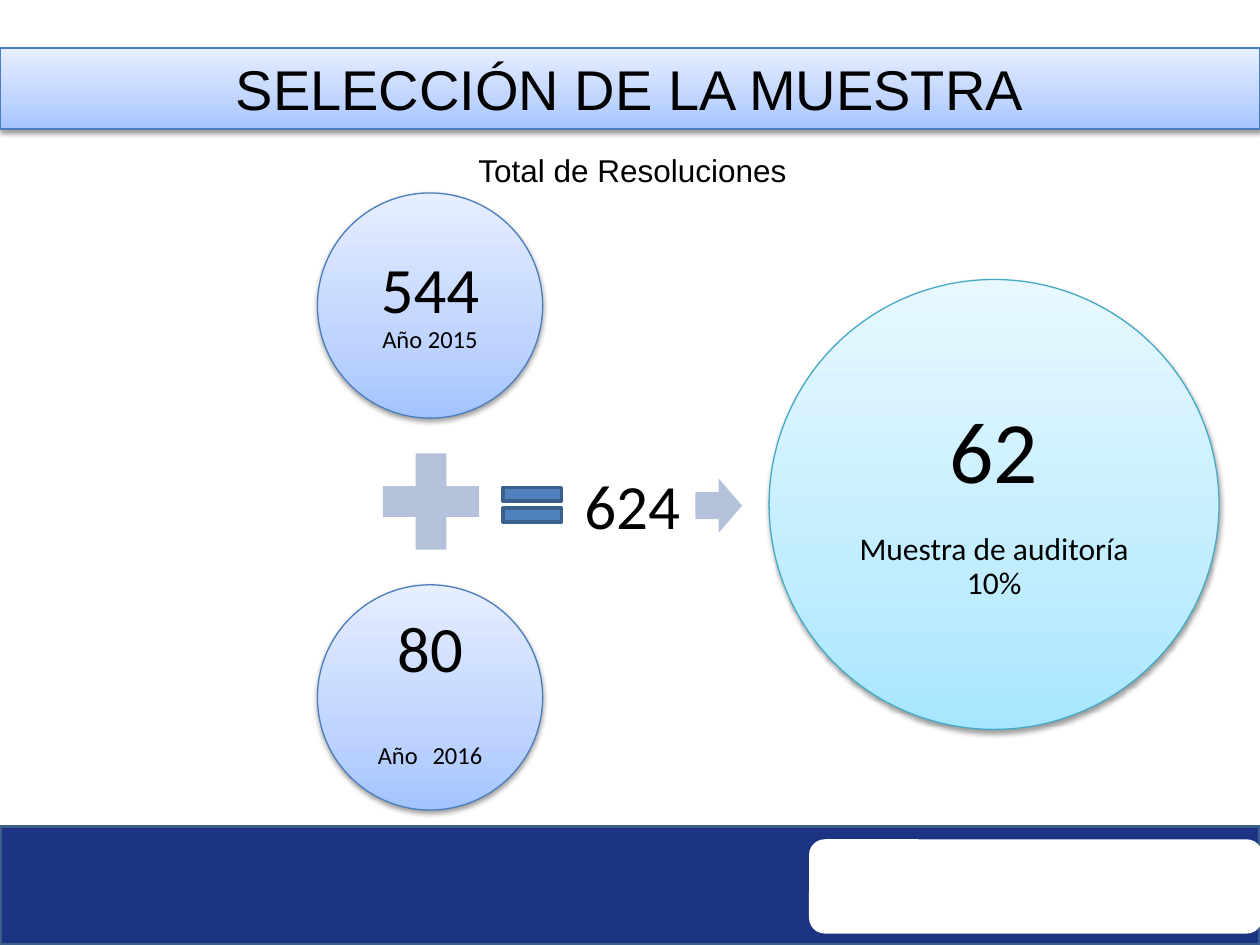
import copy
import math
import lxml.etree
import pptx
import pptx.util
import pptx.dml.color
import pptx.enum.shapes
import pptx.enum.text
import pptx.oxml.ns

Cm, Pt = pptx.util.Cm, pptx.util.Pt
KIND = pptx.enum.shapes.MSO_SHAPE
ALIGN = pptx.enum.text.PP_ALIGN
MID = pptx.enum.text.MSO_ANCHOR.MIDDLE
TOP = pptx.enum.text.MSO_ANCHOR.TOP
qn = pptx.oxml.ns.qn

HUE = {"navy": "1C3481", "edge": "3A5F8C", "white": "FFFFFF", "black": "000000",
       "pale": "B3C1DB", "blue": "4F81BD", "rim": "4B7EBC", "teal": "46AAC5"}
BLUES = ("A4C4FF", "BFD4FF", "E6EEFF")
AQUAS = ("A7E6FF", "C1EDFF", "E7F8FF")
STOPS = (0, 35, 100)

# Content: a paragraph is a list of (text, size) runs
TITLE = [[("SELECCIÓN DE LA MUESTRA", 32)]]
HEAD = [[("Total de Resoluciones", 18)]]
SUM = [[("624", 36)]]
# Circles: centre x, centre y, width, inset, shades, rim, text
DISCS = [
    (8.67, 6.16, 4.54, 0.13, BLUES, "rim", [[("544 ", 37), ("Año 2015", 14)]]),
    (8.67, 14.06, 4.54, 0.13, BLUES, "rim",
     [[("80", 37)], [("Año", 14), (" ", 37), ("2016", 14)]]),
    (20.04, 10.17, 9.07, 0.18, AQUAS, "teal",
     [[("62", 50)], [("Muestra de auditoría 10%", 18)]]),
]
# Plain shapes: kind, left, top, width, height, fill, line
BASE = [(KIND.RECTANGLE, 0, 16.66, 25.4, 2.39, "navy", "edge"),
        (KIND.ROUNDED_RECTANGLE, 16.31, 16.92, 9.14, 1.9, "white", None)]
SIGNS = [(KIND.MATH_PLUS, 7.37, 8.79, 2.64, 2.64, "pale", None),
         (KIND.RIGHT_ARROW, 14.02, 9.65, 0.94, 1.09, "pale", None),
         (KIND.MATH_EQUAL, 9.93, 9.58, 1.6, 1.19, "blue", "edge")]


def tint(name):
    return pptx.dml.color.RGBColor.from_string(HUE.get(name, name))


def outline(shape, name, width):
    shape.line.color.rgb = tint(name)
    shape.line.width = Pt(width)


def shade(shape, tones, rim):
    """Three-tone upward gradient, thin rim and soft shadow below."""
    shape.fill.gradient()
    shape.fill.gradient_angle = 90
    stops = shape._element.spPr.find(".//" + qn("a:gsLst"))
    stops.insert(1, copy.deepcopy(stops[0]))
    for stop, tone, place in zip(shape.fill.gradient_stops, tones, STOPS):
        stop.color.rgb = tint(tone)
        stop.position = place / 100
    outline(shape, rim, 0.75)
    shape.shadow.inherit = False
    glow = shape._element.spPr.find(qn("a:effectLst"))
    drop = lxml.etree.SubElement(glow, qn("a:outerShdw"), blurRad=str(Pt(3.1)),
                                 dist=str(Pt(1.6)), dir="5400000", rotWithShape="0")
    ink = lxml.etree.SubElement(drop, qn("a:srgbClr"), val=HUE["black"])
    lxml.etree.SubElement(ink, qn("a:alpha"), val="38000")


def write(frame, paras, font, align=ALIGN.CENTER, anchor=TOP, tight=False):
    frame.word_wrap = True
    frame.vertical_anchor = anchor
    for i, runs in enumerate(paras):
        para = frame.add_paragraph() if i else frame.paragraphs[0]
        para.alignment = align
        para.font.name = font
        para.font.color.rgb = tint("black")
        para.font.size = Pt(runs[0][1])
        if tight:
            para.line_spacing = 0.9
        if i < len(paras) - 1:
            para.space_after = Pt(round(0.35 * runs[0][1]))
        for text, size in runs:
            run = para.add_run()
            run.text = text
            if size != runs[0][1]:
                run.font.size = Pt(size)


def draw(slide, kind, left, top, width, height, fill=None, line=None):
    shape = slide.shapes.add_shape(kind, Cm(left), Cm(top), Cm(width), Cm(height))
    shape.shadow.inherit = False
    if fill:
        shape.fill.solid()
        shape.fill.fore_color.rgb = tint(fill)
    if line:
        outline(shape, line, 2)
    else:
        shape.line.fill.background()
    return shape


def label(slide, left, top, width, height):
    box = slide.shapes.add_textbox(Cm(left), Cm(top), Cm(width), Cm(height))
    return box.text_frame


def disc(slide, x, y, size, inset, tones, rim, paras):
    half = size / 2
    shade(draw(slide, KIND.OVAL, x - half, y - half, size, size), tones, rim)
    # Text sits in the square inscribed in the circle
    side = size / math.sqrt(2)
    frame = label(slide, x - side / 2, y - side / 2, side, side)
    frame.margin_left = frame.margin_right = Cm(inset)
    frame.margin_top = frame.margin_bottom = Cm(inset)
    write(frame, paras, "Calibri", anchor=MID, tight=True)


def main():
    deck = pptx.Presentation()
    deck.slide_width, deck.slide_height = Cm(25.4), Cm(19.05)
    slide = deck.slides.add_slide(deck.slide_layouts[5])

    # Footer band
    for part in BASE:
        draw(slide, *part)

    # Title bar
    title = slide.shapes.title
    title.left, title.top, title.width, title.height = Cm(0), Cm(0.97), Cm(25.4), Cm(1.63)
    shade(title, BLUES, "rim")
    title.text_frame.auto_size = pptx.enum.text.MSO_AUTO_SIZE.NONE
    write(title.text_frame, TITLE, "Arial", anchor=MID)

    # Sum of both years and the sample
    for item in DISCS:
        disc(slide, *item)
    for part in SIGNS:
        draw(slide, *part)
    write(label(slide, 0.1, 2.92, 25.3, 1.02), HEAD, "Arial")
    write(label(slide, 11.53, 9.27, 2.67, 1.8), SUM, "Calibri", ALIGN.LEFT)

    deck.save("out.pptx")


if __name__ == "__main__":
    main()
